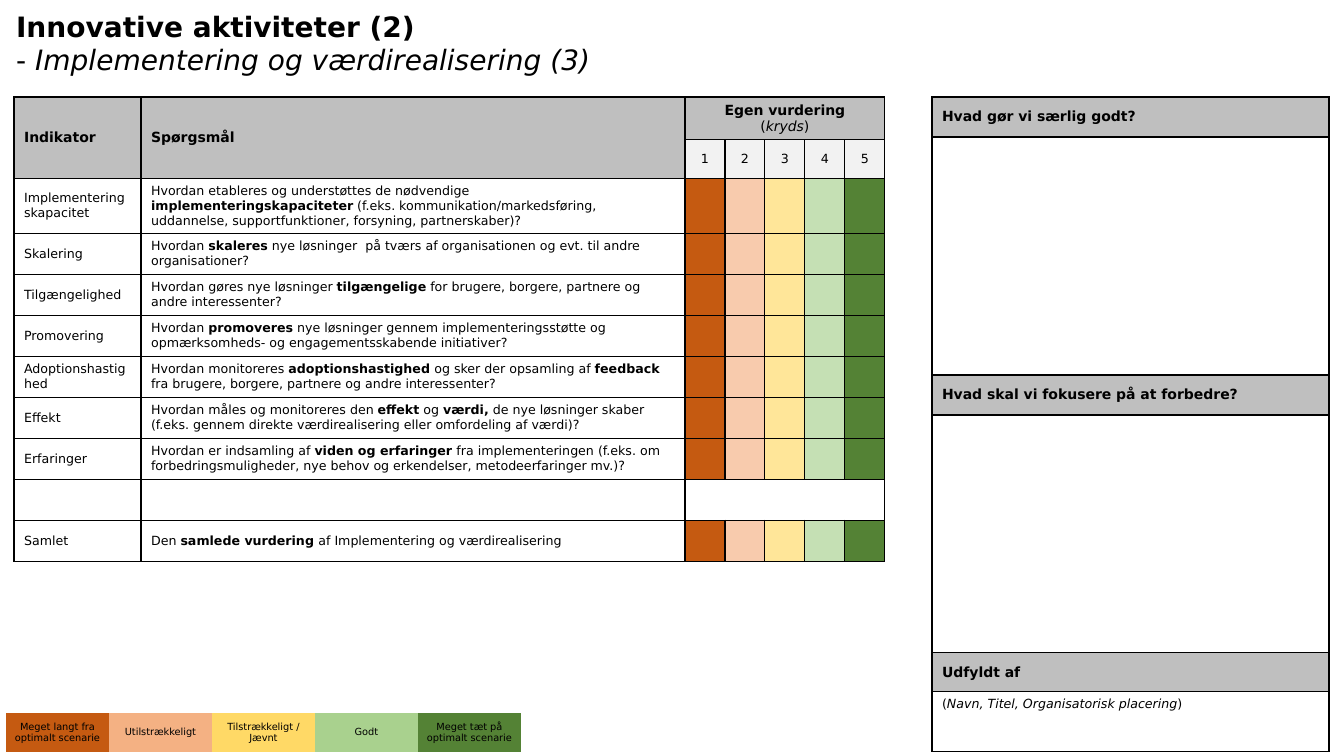
from lxml import etree
from pptx import Presentation
from pptx.dml.color import RGBColor
from pptx.enum.text import MSO_ANCHOR as Anchor, MSO_AUTO_SIZE as AutoSize, PP_ALIGN as Align
from pptx.oxml.ns import qn
from pptx.util import Pt

# Content: *bold*, _italic_
TITLE = "*Innovative aktiviteter (2)*\n- _Implementering og værdirealisering (3)_"
HEADERS = ["*Indikator*", "*Spørgsmål*", "*Egen vurdering*\n(_kryds_)"]
SCORES = ["1", "2", "3", "4", "5"]
INDICATORS = [
    ("Implementeringskapacitet", "Hvordan etableres og understøttes de nødvendige "
     "*implementeringskapaciteter* (f.eks. kommunikation/markedsføring, uddannelse, "
     "supportfunktioner, forsyning, partnerskaber)?"),
    ("Skalering", "Hvordan *skaleres* nye løsninger  på tværs af organisationen "
     "og evt. til andre organisationer?"),
    ("Tilgængelighed", "Hvordan gøres nye løsninger *tilgængelige* for brugere, "
     "borgere, partnere og andre interessenter?"),
    ("Promovering", "Hvordan *promoveres* nye løsninger gennem implementeringsstøtte "
     "og opmærksomheds- og engagementsskabende initiativer?"),
    ("Adoptionshastighed", "Hvordan monitoreres *adoptionshastighed *og sker der "
     "opsamling af *feedback *fra brugere, borgere, partnere og andre interessenter?"),
    ("Effekt", "Hvordan måles og monitoreres den *effekt* og *værdi,* de nye løsninger "
     "skaber (f.eks. gennem direkte værdirealisering eller omfordeling af værdi)?"),
    ("Erfaringer", "Hvordan er indsamling af *viden og erfaringer *fra implementeringen "
     "(f.eks. om forbedringsmuligheder, nye behov og erkendelser, metodeerfaringer mv.)?"),
    ("", ""),
    ("Samlet", "Den *samlede vurdering *af Implementering og værdirealisering"),
]
REFLECTIONS = [  # heading, heading height, answer, answer height
    ("*Hvad gør vi særlig godt?*", 40, "", 238),
    ("*Hvad skal vi fokusere på at forbedre?*", 40, "", 238),
    ("*Udfyldt af*", 39, "(_Navn, Titel, Organisatorisk placering_)", 60),
]
LEGEND = [
    ("Meget langt fra optimalt scenarie", "far"),
    ("Utilstrækkeligt", "poor"),
    ("Tilstrækkeligt / Jævnt", "fair"),
    ("Godt", "good"),
    ("Meget tæt på optimalt scenarie", "near"),
]
RATING_FILLS = ["far", "poor light", "fair light", "good light", "near"]
COLORS = {
    "text": "000000", "border": "000000", "header": "BFBFBF", "score": "F2F2F2",
    "far": "C55A11", "near": "548235",
    "poor": "F4B183", "fair": "FFD966", "good": "A9D18E",
    "poor light": "F8CBAD", "fair light": "FFE699", "good light": "C5E0B4",
}
FONT = "DejaVu Sans"
PLAIN_TABLE = "{2D5ABB26-0587-4C30-8999-92F81FD0307C}"
EDGES = {"l": "a:lnL", "r": "a:lnR", "t": "a:lnT", "b": "a:lnB"}


def px(length):
    return round(length * 914400 / 100.8)


def write(frame, text, size, align=Align.LEFT):
    for i, line in enumerate(text.split("\n")):
        paragraph = frame.add_paragraph() if i else frame.paragraphs[0]
        paragraph.alignment = align
        paragraph.font.name = FONT
        paragraph.font.size = Pt(size)
        paragraph.font.color.rgb = RGBColor.from_string(COLORS["text"])
        for b, bold_part in enumerate(line.split("*")):
            for k, part in enumerate(bold_part.split("_")):
                if part:
                    run = paragraph.add_run()
                    run.text = part
                    run.font.bold = b % 2 == 1
                    run.font.italic = k % 2 == 1


def set_borders(cell, sides):
    props = cell._tc.get_or_add_tcPr()
    for i, (side, tag) in enumerate(EDGES.items()):
        line = etree.Element(qn(tag), w=str(Pt(1)))
        if side in sides:
            fill = etree.SubElement(line, qn("a:solidFill"))
            etree.SubElement(fill, qn("a:srgbClr"), val=COLORS["border"])
        else:
            etree.SubElement(line, qn("a:noFill"))
        props.insert(i, line)


def style_cell(cell, text="", fill=None, size=9, align=Align.LEFT,
               anchor=Anchor.MIDDLE, sides="lrtb"):
    write(cell.text_frame, text, size, align)
    cell.vertical_anchor = anchor
    if fill:
        cell.fill.solid()
        cell.fill.fore_color.rgb = RGBColor.from_string(COLORS[fill])
    else:
        cell.fill.background()
    set_borders(cell, sides)


def add_plain_table(left, top, widths, heights):
    table = slide.shapes.add_table(len(heights), len(widths), px(left), px(top),
                                   px(sum(widths)), px(sum(heights))).table
    table.first_row = table.horz_banding = False
    table._tbl.tblPr.find(qn("a:tableStyleId")).text = PLAIN_TABLE
    for column, width in zip(table.columns, widths):
        column.width = px(width)
    for row, height in zip(table.rows, heights):
        row.height = px(height)
    return table


prs = Presentation()
prs.slide_width, prs.slide_height = px(1344), px(756)
slide = prs.slides.add_slide(prs.slide_layouts[5])

# Title
title = slide.shapes.title
title.left, title.top, title.width, title.height = px(6), px(4), px(1000), px(78)
title.text_frame.auto_size = AutoSize.NONE
title.text_frame.word_wrap = True
title.text_frame.vertical_anchor = Anchor.MIDDLE
write(title.text_frame, TITLE, 20)

# Assessment table: two header rows, then one row per indicator
assessment = add_plain_table(14, 97, [127, 544] + [40] * len(SCORES),
                             [39, 39] + [41] * len(INDICATORS))
for col in range(2 + len(SCORES)):
    for row in range(2):
        is_score = row == 1 and col >= 2
        heading = HEADERS[col] if row == 0 and col < len(HEADERS) else ""
        style_cell(assessment.cell(row, col),
                   SCORES[col - 2] if is_score else heading,
                   "score" if is_score else "header",
                   size=9 if is_score else 10,
                   align=Align.CENTER if col >= 2 else Align.LEFT)
for col in range(2):
    assessment.cell(0, col).merge(assessment.cell(1, col))
assessment.cell(0, 2).merge(assessment.cell(0, 1 + len(SCORES)))

for row, (indicator, question) in enumerate(INDICATORS, 2):
    style_cell(assessment.cell(row, 0), indicator)
    style_cell(assessment.cell(row, 1), question)
    for i, fill in enumerate(RATING_FILLS):
        sides = "lrtb"
        if not indicator:
            fill = None
            sides = "tb" + ("l" if i == 0 else "") + ("r" if i == len(SCORES) - 1 else "")
        style_cell(assessment.cell(row, 2 + i), fill=fill, sides=sides)

# Reflection table: heading and answer space in turn
reflection_heights = [h for _, head, _, body in REFLECTIONS for h in (head, body)]
reflection = add_plain_table(932, 97, [397], reflection_heights)
for i, (heading, _, answer, _) in enumerate(REFLECTIONS):
    style_cell(reflection.cell(2 * i, 0), heading, "header", size=10)
    style_cell(reflection.cell(2 * i + 1, 0), answer, anchor=Anchor.TOP)

# Colour legend
legend = add_plain_table(6, 713, [103] * len(LEGEND), [39])
for i, (label, fill) in enumerate(LEGEND):
    cell = legend.cell(0, i)
    cell.margin_left = cell.margin_right = px(7)
    cell.margin_top = cell.margin_bottom = 0
    style_cell(cell, label, fill, size=7, align=Align.CENTER, sides="")

prs.save("out.pptx")
